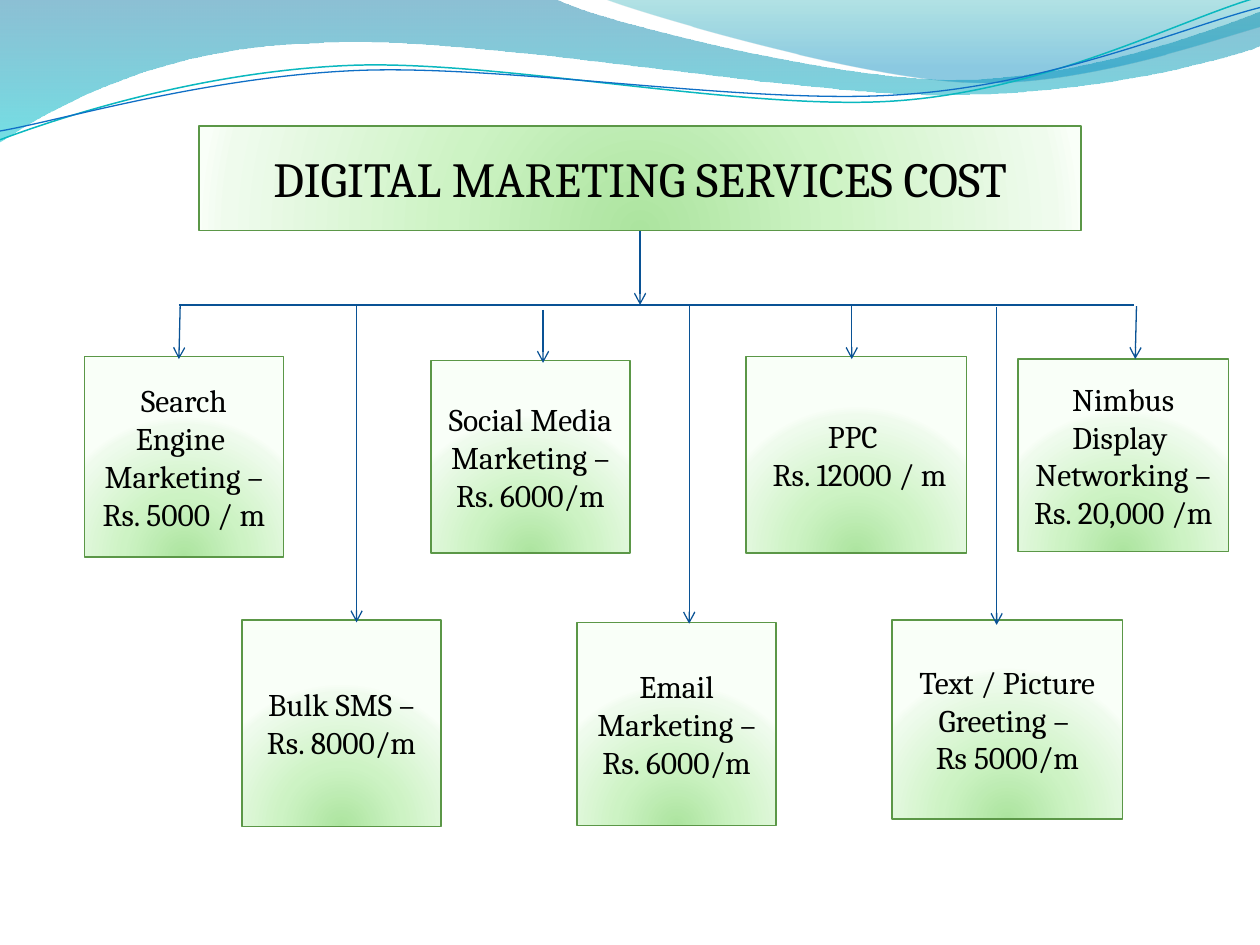
"""Build a slide charting the cost of digital marketing services."""
import dataclasses

import pptx
import pptx.dml.color
import pptx.enum.shapes
import pptx.enum.text
import pptx.oxml
import pptx.oxml.ns
import pptx.util
from pptx.util import Inches


@dataclasses.dataclass(frozen=True)
class Theme:
    font: str = "Cambria"
    title_size: int = 28
    box_size: int = 18
    line_width: float = 0.75
    text: str = "000000"
    box_line: str = "5B9747"
    connector: str = "095295"
    box_stops: tuple = ((0, "ACE49F", 100), (43, "CDF3C4", 100), (93, "EFFBED", 100), (100, "F9FFF8", 100))
    box_direction: str = '<a:path path="circle"><a:fillToRect l="50000" t="130000" r="50000" b="-30000"/></a:path>'
    band_stops: tuple = ((0, "0074A1", 45), (100, "00C6CF", 55))
    crest_stops: tuple = ((0, "00A1A9", 30), (80, "008BBF", 45))
    band_direction: str = '<a:lin ang="5400000" scaled="0"/>'
    teal_wave: str = "0AB8BF"
    blue_wave: str = "0F6FC6"


def set_gradient(shape, stops, direction):
    """Fill a shape with (position, colour, opacity) stops."""
    shape.fill.gradient()
    gradient = shape._element.spPr.find(pptx.oxml.ns.qn("a:gradFill"))
    for child in list(gradient):
        gradient.remove(child)
    stop_xml = ""
    for position, color, opacity in stops:
        alpha = f'<a:alpha val="{opacity * 1000}"/>' if opacity < 100 else ""
        stop_xml += f'<a:gs pos="{position * 1000}"><a:srgbClr val="{color}">{alpha}</a:srgbClr></a:gs>'
    namespace = pptx.oxml.ns.nsdecls("a")
    gradient.append(pptx.oxml.parse_xml(f"<a:gsLst {namespace}>{stop_xml}</a:gsLst>"))
    gradient.append(pptx.oxml.parse_xml(direction.replace(" ", f" {namespace} ", 1)))


def add_outline(shapes, segments, closed):
    """Draw a freeform from points and cubic curves given in inches."""
    anchors = [(Inches(segment[-2]), Inches(segment[-1])) for segment in segments]
    builder = shapes.build_freeform(*anchors[0])
    builder.add_line_segments(anchors[1:], close=closed)
    outline = builder.convert_to_shape()
    outline.shadow.inherit = False
    straight_lines = list(outline._element.iter(pptx.oxml.ns.qn("a:lnTo")))
    for straight_line, segment in zip(straight_lines, segments[1:]):
        if len(segment) == 6:
            points = "".join(
                f'<a:pt x="{Inches(x) - outline.left}" y="{Inches(y) - outline.top}"/>'
                for x, y in zip(segment[::2], segment[1::2])
            )
            curve = pptx.oxml.parse_xml(
                f'<a:cubicBezTo {pptx.oxml.ns.nsdecls("a")}>{points}</a:cubicBezTo>'
            )
            straight_line.getparent().replace(straight_line, curve)
    return outline


theme = Theme()
presentation = pptx.Presentation()
presentation.slide_width = Inches(10)
presentation.slide_height = Inches(7.5)
slide = presentation.slides.add_slide(presentation.slide_layouts[6])

bands = [
    ([(0, 0), (4.4, -0.01), (4.76, 0.17, 6.64, 0.63, 7.58, 0.63), (8.53, 0.63, 9.58, 0.26, 10, 0.09),
      (10.01, 0.36), (9.83, 0.44, 8.7, 0.76, 7.46, 0.75), (6.22, 0.75, 3.82, 0.28, 2.57, 0.34),
      (1.29, 0.36, 0.46, 0.83, -0.01, 1.13)], theme.band_stops),
    ([(4.79, -0.01), (5.09, 0.11, 6.82, 0.62, 7.69, 0.65), (8.56, 0.69, 9.61, 0.32, 10, 0.21),
      (10, 0)], theme.crest_stops),
]
for segments, stops in bands:
    band = add_outline(slide.shapes, segments, True)
    set_gradient(band, stops, theme.band_direction)
    band.line.fill.background()

waves = [
    ([(0, 1.11), (0.48, 0.93, 1.58, 0.57, 2.77, 0.52), (3.95, 0.47, 5.93, 0.89, 7.13, 0.8),
      (8.33, 0.71, 9.38, 0.15, 9.98, -0.02)], theme.teal_wave, 0.85),
    ([(0, 1.04), (0.47, 0.96, 1.64, 0.61, 2.83, 0.56), (4.03, 0.51, 5.97, 0.84, 7.17, 0.75),
      (8.36, 0.67, 9.41, 0.21, 10, 0.06)], theme.blue_wave, 0.75),
]
for segments, color, width in waves:
    wave = add_outline(slide.shapes, segments, False)
    wave.fill.background()
    wave.line.color.rgb = pptx.dml.color.RGBColor.from_string(color)
    wave.line.width = pptx.util.Pt(width)

title_text = "DIGITAL MARETING SERVICES COST"
boxes = [
    (title_text, 1.58, 1, 7, 0.83),
    ("Search Engine  Marketing – Rs. 5000 / m", 0.67, 2.83, 1.58, 1.59),
    ("Social Media Marketing – Rs. 6000/m", 3.42, 2.86, 1.58, 1.53),
    ("Text / Picture Greeting – \nRs 5000/m", 7.08, 4.92, 1.83, 1.58),
    ("Nimbus Display  Networking – Rs. 20,000 /m", 8.08, 2.85, 1.67, 1.53),
    ("PPC \n Rs. 12000 / m", 5.92, 2.83, 1.75, 1.56),
    ("Email Marketing – Rs. 6000/m", 4.58, 4.94, 1.58, 1.61),
    ("Bulk SMS – Rs. 8000/m", 1.92, 4.92, 1.58, 1.64),
]
box_shapes = {}
for text, left, top, width, height in boxes:
    box = slide.shapes.add_shape(
        pptx.enum.shapes.MSO_SHAPE.RECTANGLE, Inches(left), Inches(top), Inches(width), Inches(height)
    )
    box_shapes[text] = box
    box.shadow.inherit = False
    set_gradient(box, theme.box_stops, theme.box_direction)
    box.line.color.rgb = pptx.dml.color.RGBColor.from_string(theme.box_line)
    box.line.width = pptx.util.Pt(theme.line_width)
    box.text_frame.word_wrap = True
    box.text_frame.vertical_anchor = pptx.enum.text.MSO_ANCHOR.MIDDLE
    box.text_frame.text = text
    for paragraph in box.text_frame.paragraphs:
        paragraph.alignment = pptx.enum.text.PP_ALIGN.CENTER
        for run in paragraph.runs:
            run.font.name = theme.font
            run.font.size = pptx.util.Pt(theme.title_size if text == title_text else theme.box_size)
            run.font.color.rgb = pptx.dml.color.RGBColor.from_string(theme.text)

bus_y = 2.42
title_x = 5.08
lines = [
    (1.42, bus_y, 9, bus_y),
    (title_x, 1.83, title_x, bus_y),
    (1.43, 2.43, 1.42, 2.85),
    (4.31, 2.46, 4.31, 2.88),
    (6.76, 2.43, 6.76, 2.85),
    (9.02, 2.43, 9.01, 2.85),
    (2.83, 2.43, 2.83, 4.94),
    (5.47, 2.43, 5.47, 4.95),
    (7.91, 2.44, 7.91, 4.96),
]
for start_x, start_y, end_x, end_y in lines:
    connector = slide.shapes.add_connector(
        pptx.enum.shapes.MSO_CONNECTOR.STRAIGHT,
        Inches(start_x), Inches(start_y), Inches(end_x), Inches(end_y),
    )
    connector.line.color.rgb = pptx.dml.color.RGBColor.from_string(theme.connector)
    connector.line.width = pptx.util.Pt(theme.line_width)
    if start_y != end_y:
        arrowhead = pptx.oxml.parse_xml(f'<a:tailEnd {pptx.oxml.ns.nsdecls("a")} type="arrow"/>')
        connector.line._get_or_add_ln().append(arrowhead)
    if start_x == title_x:
        connector.begin_connect(box_shapes[title_text], 2)
    connector._element.spPr.append(pptx.oxml.parse_xml(f'<a:effectLst {pptx.oxml.ns.nsdecls("a")}/>'))

presentation.save("out.pptx")
